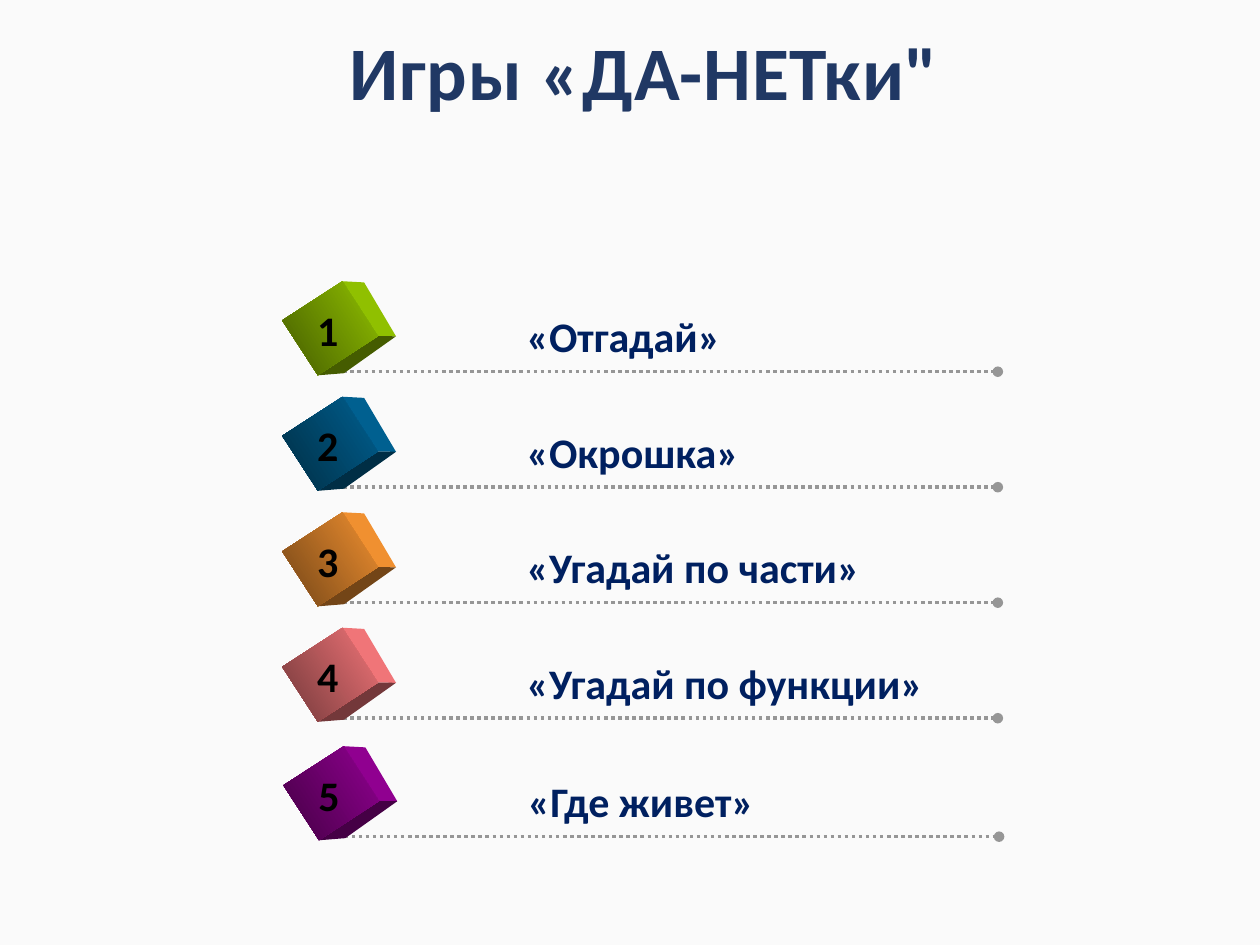
"""Build a slide that lists five guessing games beside numbered cubes."""
import pptx
import pptx.dml.color
import pptx.enum.dml
import pptx.enum.shapes
import pptx.enum.text
import pptx.oxml.ns
import pptx.util
from lxml import etree

Pt = pptx.util.Pt
COLORS = {
    "background": "FAFAFA",
    "title": "203864",
    "game": "002060",
    "number": "000000",
    "rule": "969696",
}
GAMES = [
    ("«Отгадай»", "99CC00", 0, 212.4, 126.7),
    ("«Окрошка»", "006699", 0, 278.4, 136.8),
    ("«Угадай по части»", "FF9933", 0, 344.4, 206.6),
    ("«Угадай по функции»", "FF7C80", 0, 410.4, 243.4),
    ("«Где живет»", "990099", 0.7, 478.1, 145.4),
]
SIDE_FACES = [
    (0.94, [(7, -26.9), (19.5, -26.2), (37.7, 4.6), (27.4, 4.5)]),
    (0.45, [(27.4, 4.5), (37.7, 4.6), (8, 25.7), (-7, 26.9)]),
]


def shade(color, factor=1):
    channels = bytes.fromhex(color)
    return pptx.dml.color.RGBColor(*(round(channel * factor) for channel in channels))


def add_text(shapes, text, left, top, width, height, size, color):
    box = shapes.add_textbox(Pt(left), Pt(top), Pt(width), Pt(height))
    box.text_frame.word_wrap = False
    para = box.text_frame.paragraphs[0]
    para.text = text
    para.font.name = "Calibri"
    para.font.size = Pt(size)
    para.font.bold = True
    para.font.color.rgb = shade(color)
    return box


deck = pptx.Presentation()
deck.slide_width = Pt(720)
deck.slide_height = Pt(540)
page = deck.slides.add_slide(deck.slide_layouts[6])
page.background.fill.solid()
page.background.fill.fore_color.rgb = shade(COLORS["background"])

title = add_text(page.shapes, "Игры «ДА-НЕТки\"", 175, 12.2, 386, 62.6, 43.2, COLORS["title"])
title.text_frame.word_wrap = True
title.text_frame.vertical_anchor = pptx.enum.text.MSO_ANCHOR.MIDDLE
heading = title.text_frame.paragraphs[0]
heading.alignment = pptx.enum.text.PP_ALIGN.CENTER
heading.line_spacing = 0.9
heading.runs[0].font._element.set("spc", "50")

for number, (game, color, shift, rule_y, text_width) in enumerate(GAMES, 1):
    shapes = page.shapes.add_group_shape().shapes

    rule = shapes.add_connector(
        pptx.enum.shapes.MSO_CONNECTOR.STRAIGHT,
        Pt(192.2 + shift), Pt(rule_y), Pt(570.2 + shift), Pt(rule_y),
    )
    rule.line.color.rgb = shade(COLORS["rule"])
    rule.line.width = Pt(2)
    rule.line.dash_style = pptx.enum.dml.MSO_LINE.ROUND_DOT
    tail = etree.SubElement(rule.line._get_or_add_ln(), pptx.oxml.ns.qn("a:tailEnd"))
    tail.set("type", "oval")
    etree.SubElement(rule._element.spPr, pptx.oxml.ns.qn("a:effectLst"))

    center_x, center_y = 188.6 + shift, rule_y - 24.8
    for factor, corners in SIDE_FACES:
        points = [(Pt(center_x + x), Pt(center_y + y)) for x, y in corners]
        outline = shapes.build_freeform(*points[0])
        outline.add_line_segments(points[1:])
        side = outline.convert_to_shape()
        side.shadow.inherit = False
        side.fill.solid()
        side.fill.fore_color.rgb = shade(color, factor)
        side.line.fill.background()

    front = shapes.add_shape(
        pptx.enum.shapes.MSO_SHAPE.RECTANGLE,
        Pt(center_x - 18.7), Pt(center_y - 20.5), Pt(37.4), Pt(41),
    )
    front.rotation = 57
    front.shadow.inherit = False
    front.line.fill.background()
    front.fill.gradient()
    front.fill.gradient_angle = 270
    for stop, factor in zip(front.fill.gradient_stops, (0.94, 0.45)):
        stop.color.rgb = shade(color, factor)
    front.fill.gradient_stops[0].position = 0
    front.fill.gradient_stops[1].position = 1

    add_text(shapes, game, 293.8 + shift, rule_y - 38.4, text_width, 36.7, 24, COLORS["game"])
    add_text(shapes, str(number), 174.2 + shift, rule_y - 42, 26.6, 36.7, 24, COLORS["number"])

deck.save("out.pptx")
